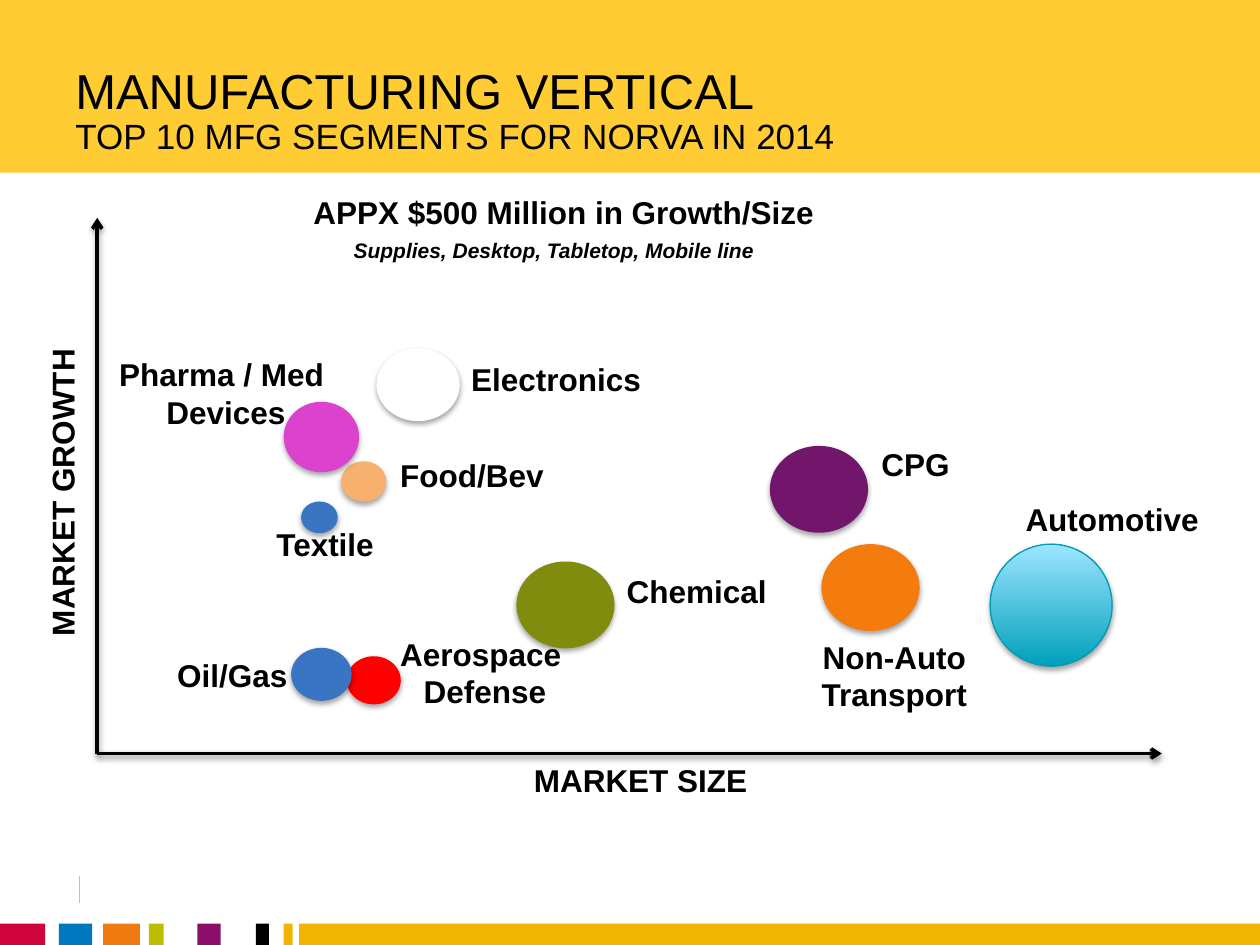
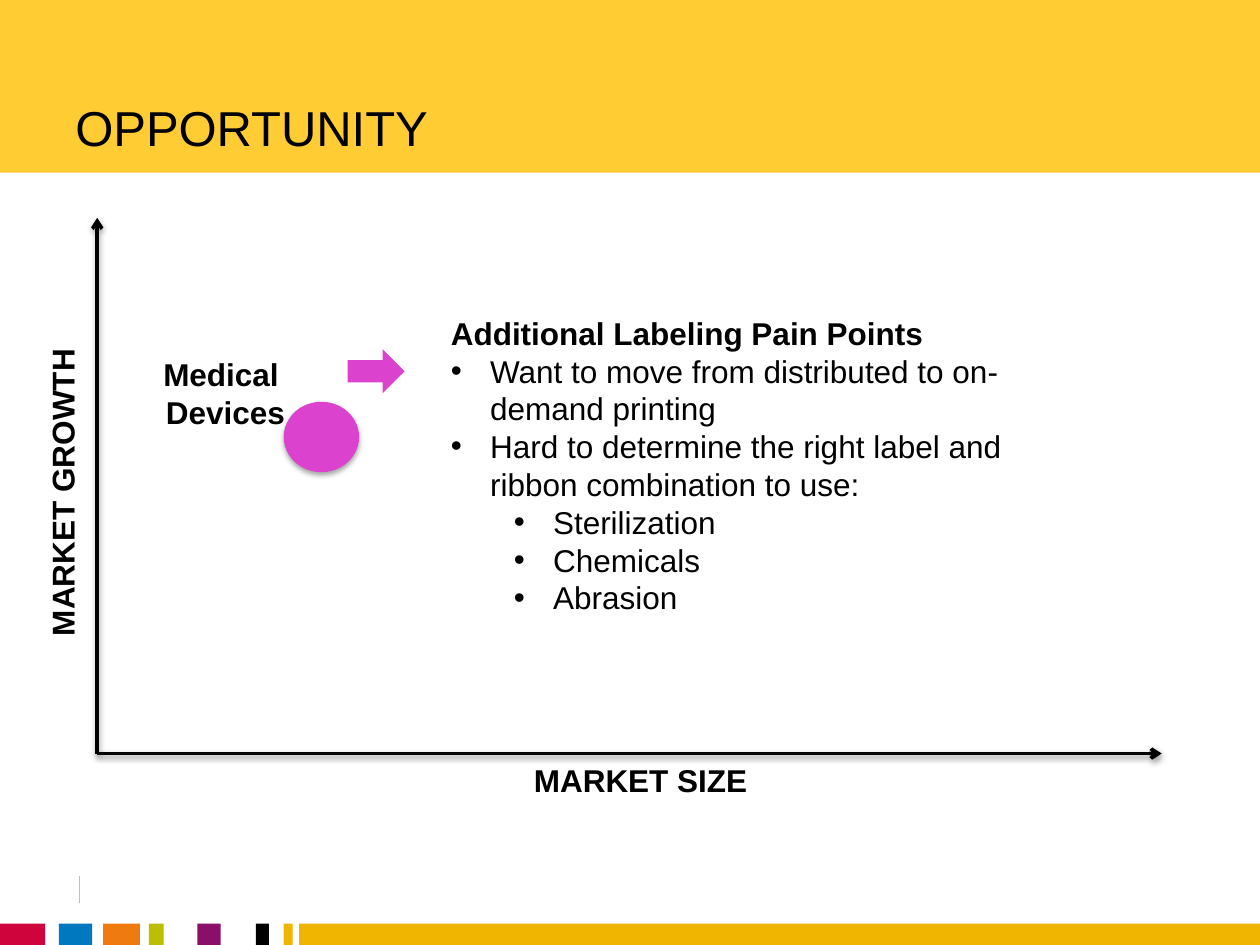
from dataclasses import dataclass
from typing import NamedTuple

from lxml.etree import SubElement
from pptx import Presentation
from pptx.dml.color import RGBColor
from pptx.enum.shapes import MSO_CONNECTOR, MSO_SHAPE
from pptx.enum.text import MSO_ANCHOR, PP_ALIGN
from pptx.oxml.ns import qn
from pptx.util import Cm, Pt

FONT = "Arial"
COLORS = {
    "text": "000000", "band": "FFCC33", "tick": "BFBFBF",
    "red": "D0043C", "blue": "0078BF", "orange": "EF7B10", "lime": "BCBE00",
    "plum": "8B0E68", "black": "000000", "gold": "F0B500",
    "automotive": "00A0BA", "automotive_top": "9EE5FF", "automotive_edge": "009CB6",
    "transport": "F47C0E", "cpg": "72166B", "electronics": "FFFFFF",
    "aerospace": "FF0000", "steel_blue": "3A75C4", "food": "F8B06E",
    "pharma": "DB43CF", "chemical": "808C0D",
}
SLIDE_WIDTH, SLIDE_HEIGHT = 25.4, 19.05
STRIPE_TOP = 18.62
ORIGIN_X, ORIGIN_Y = 1.96, 15.19
AXIS_RIGHT, AXIS_TOP = 23.42, 4.39
ONE_LINE, TWO_LINES = 1.02, 1.8
BULLET_HANG = 0.79
BULLET_STEP = 1.27


class Box(NamedTuple):
    """Left, top, width and height in centimetres."""
    left: float
    top: float
    width: float
    height: float


class Stripe(NamedTuple):
    left: float
    width: float
    color: str


class Line(NamedTuple):
    """A paragraph; None takes the format of its text box."""
    text: str
    size: float | None = None
    bold: bool | None = None
    bullet_level: int | None = None


@dataclass(frozen=True)
class Segment:
    color: str
    bubble: Box
    label: Box
    lines: tuple[str, ...]
    align: PP_ALIGN = PP_ALIGN.CENTER
    wrap: bool = False


STRIPES = [
    Stripe(0, 0.91, "red"), Stripe(1.19, 0.67, "blue"), Stripe(2.08, 0.74, "orange"),
    Stripe(3, 0.3, "lime"), Stripe(3.98, 0.47, "plum"), Stripe(5.16, 0.26, "black"),
    Stripe(5.72, 0.18, "gold"), Stripe(6.03, 19.37, "gold"),
]

PHARMA = Segment("pharma", Box(5.72, 8.1, 1.52, 1.42),
                 Box(2.13, 7.04, 4.85, TWO_LINES), ("Pharma / Med ", "Devices"))
SEGMENTS = [
    Segment("automotive", Box(19.96, 10.97, 2.46, 2.46),
            Box(20.4, 9.96, 4.04, ONE_LINE), ("Automotive",)),
    Segment("transport", Box(16.56, 10.97, 1.98, 1.75),
            Box(14.88, 12.73, 6.3, TWO_LINES), ("Non-Auto Transport",), wrap=True),
    Segment("cpg", Box(15.52, 8.99, 1.98, 1.75),
            Box(17.5, 8.84, 1.91, ONE_LINE), ("CPG",)),
    Segment("electronics", Box(7.59, 7.02, 1.68, 1.47),
            Box(9.25, 7.14, 3.96, ONE_LINE), ("Electronics",), PP_ALIGN.LEFT),
    Segment("aerospace", Box(6.99, 13.23, 1.09, 0.97),
            Box(7.8, 12.67, 3.78, TWO_LINES), ("Aerospace", " Defense")),
    Segment("steel_blue", Box(6.07, 10.11, 0.74, 0.64),
            Box(5.31, 10.46, 2.49, ONE_LINE), ("Textile",)),
    Segment("steel_blue", Box(5.87, 13.06, 1.22, 1.07),
            Box(3.3, 13.11, 2.77, ONE_LINE), ("Oil/Gas",)),
    Segment("food", Box(6.88, 9.3, 0.91, 0.81),
            Box(7.8, 9.07, 3.43, ONE_LINE), ("Food/Bev",)),
    PHARMA,
    Segment("chemical", Box(10.41, 11.32, 1.98, 1.75),
            Box(12.37, 11.4, 3.35, ONE_LINE), ("Chemical",)),
]


def rgb(name: str) -> RGBColor:
    return RGBColor.from_string(COLORS[name])


def lengths(box: Box) -> list[Cm]:
    return [Cm(value) for value in box]


def add_shadow(effects, opacity: int, distance: float) -> None:
    """Put a soft downward shadow in an a:effectLst element."""
    shadow = SubElement(effects, qn("a:outerShdw"), blurRad=str(Pt(3.1)),
                        dist=str(Pt(distance)), dir="5400000", rotWithShape="0")
    color = SubElement(shadow, qn("a:srgbClr"), val=COLORS["black"])
    SubElement(color, qn("a:alpha"), val=str(opacity * 1000))


def add_figure(slide, preset: MSO_SHAPE, box: Box, color: str):
    figure = slide.shapes.add_shape(preset, *lengths(box))
    figure.shadow.inherit = False
    figure.fill.solid()
    figure.fill.fore_color.rgb = rgb(color)
    figure.line.fill.background()
    return figure


def add_bubble(slide, segment: Segment) -> None:
    bubble = add_figure(slide, MSO_SHAPE.OVAL, segment.bubble, segment.color)
    if segment.color == "automotive":
        bubble.fill.gradient()
        bubble.fill.gradient_angle = 90
        for stop, name in zip(bubble.fill.gradient_stops, ("automotive", "automotive_top")):
            stop.color.rgb = rgb(name)
        bubble.line.color.rgb = rgb("automotive_edge")
        bubble.line.width = Pt(0.75)
    add_shadow(bubble._element.spPr.find(qn("a:effectLst")), 35, 1.8)


def add_line(slide, start: tuple[float, float], end: tuple[float, float],
             color: str, width: float, axis: bool = False) -> None:
    """Draw a line; an axis also gets an arrowhead and a shadow."""
    line = slide.shapes.add_connector(
        MSO_CONNECTOR.STRAIGHT, *[Cm(value) for value in (*start, *end)])
    line.line.color.rgb = rgb(color)
    line.line.width = Pt(width)
    properties = line._element.spPr
    effects = SubElement(properties, qn("a:effectLst"))
    if axis:
        SubElement(properties.find(qn("a:ln")), qn("a:tailEnd"), type="arrow")
        add_shadow(effects, 38, 1.6)


def add_bullet(paragraph, level: int) -> None:
    paragraph.level = level
    properties = paragraph._p.get_or_add_pPr()
    properties.set("marL", str(Cm(BULLET_HANG + level * BULLET_STEP)))
    properties.set("indent", str(-Cm(BULLET_HANG)))
    SubElement(properties, qn("a:buFont"), typeface=FONT)
    SubElement(properties, qn("a:buChar"), char="•")


def add_text(slide, box: Box, *lines: Line | str, size: float = 18, bold: bool = True,
             italic: bool = False, align: PP_ALIGN = PP_ALIGN.LEFT,
             anchor: MSO_ANCHOR = MSO_ANCHOR.TOP, wrap: bool = True,
             line_spacing: float | None = None, rotation: float = 0) -> None:
    holder = slide.shapes.add_textbox(*lengths(box))
    holder.rotation = rotation
    frame = holder.text_frame
    frame.word_wrap = wrap
    frame.vertical_anchor = anchor
    for index, item in enumerate(lines):
        line = Line(item) if isinstance(item, str) else item
        paragraph = frame.paragraphs[0] if index == 0 else frame.add_paragraph()
        paragraph.alignment = align
        paragraph.line_spacing = line_spacing
        if line.bullet_level is not None:
            add_bullet(paragraph, line.bullet_level)
        run = paragraph.add_run()
        run.text = line.text
        run.font.name = FONT
        run.font.size = Pt(line.size or size)
        run.font.bold = bold if line.bold is None else line.bold
        run.font.italic = italic
        run.font.color.rgb = rgb("text")


def add_label(slide, segment: Segment) -> None:
    add_text(slide, segment.label, *segment.lines, align=segment.align, wrap=segment.wrap)


def add_base_slide(deck, *title: Line | str):
    """Add a slide with the title band and the footer."""
    slide = deck.slides.add_slide(deck.slide_layouts[6])
    add_figure(slide, MSO_SHAPE.RECTANGLE, Box(0, 0, SLIDE_WIDTH, 3.48), "band")
    add_line(slide, (1.6, 17.65), (1.6, 18.2), "tick", 0.5)
    for stripe in STRIPES:
        box = Box(stripe.left, STRIPE_TOP, stripe.width, SLIDE_HEIGHT - STRIPE_TOP)
        add_figure(slide, MSO_SHAPE.RECTANGLE, box, stripe.color)
    add_text(slide, Box(1.27, 0.33, 22.86, 2.97), *title, size=28, bold=False,
             anchor=MSO_ANCHOR.BOTTOM, line_spacing=0.9)
    return slide


def add_axes(slide) -> None:
    origin = (ORIGIN_X, ORIGIN_Y)
    for end in ((AXIS_RIGHT, ORIGIN_Y), (ORIGIN_X, AXIS_TOP)):
        add_line(slide, origin, end, "black", 2, axis=True)
    add_text(slide, Box(6.3, 15.21, 13.23, ONE_LINE), "MARKET SIZE", align=PP_ALIGN.CENTER)
    add_text(slide, Box(-5.36, 9.42, 13.23, ONE_LINE), "MARKET GROWTH",
             align=PP_ALIGN.CENTER, rotation=270)


def build_segments_slide(deck) -> None:
    slide = add_base_slide(deck, "MANUFACTURING VERTICAL",
                           Line("TOP 10 MFG SEGMENTS FOR NORVA IN 2014", size=20))
    add_text(slide, Box(6.88, 4.67, 10.46, 0.77), "Supplies, Desktop, Tabletop, Mobile line",
             size=12, italic=True)
    add_text(slide, Box(6.07, 3.76, 17.35, ONE_LINE), "APPX $500 Million in Growth/Size")
    for segment in SEGMENTS:
        add_bubble(slide, segment)
    for segment in SEGMENTS:
        add_label(slide, segment)
    add_axes(slide)


def build_opportunity_slide(deck) -> None:
    slide = add_base_slide(deck, "OPPORTUNITY")
    medical = Segment(PHARMA.color, PHARMA.bubble, Box(3.02, 7.04, 3.05, TWO_LINES),
                      ("Medical ", "Devices"))
    add_bubble(slide, medical)
    add_label(slide, medical)
    add_axes(slide)
    add_figure(slide, MSO_SHAPE.RIGHT_ARROW, Box(7.01, 7.04, 1.15, 0.89), PHARMA.color)
    pain_points = [
        ("Want to move from distributed to on-demand printing", 0),
        ("Hard to determine the right label and ribbon combination to use:", 0),
        ("Sterilization", 1),
        ("Chemicals", 1),
        ("Abrasion", 1),
    ]
    add_text(slide, Box(8.84, 6.2, 12.7, 7.19), "Additional Labeling Pain Points",
             *[Line(text, bold=False, bullet_level=level) for text, level in pain_points])


def main() -> None:
    deck = Presentation()
    deck.slide_width, deck.slide_height = Cm(SLIDE_WIDTH), Cm(SLIDE_HEIGHT)
    build_segments_slide(deck)
    build_opportunity_slide(deck)
    deck.save("out.pptx")


if __name__ == "__main__":
    main()
